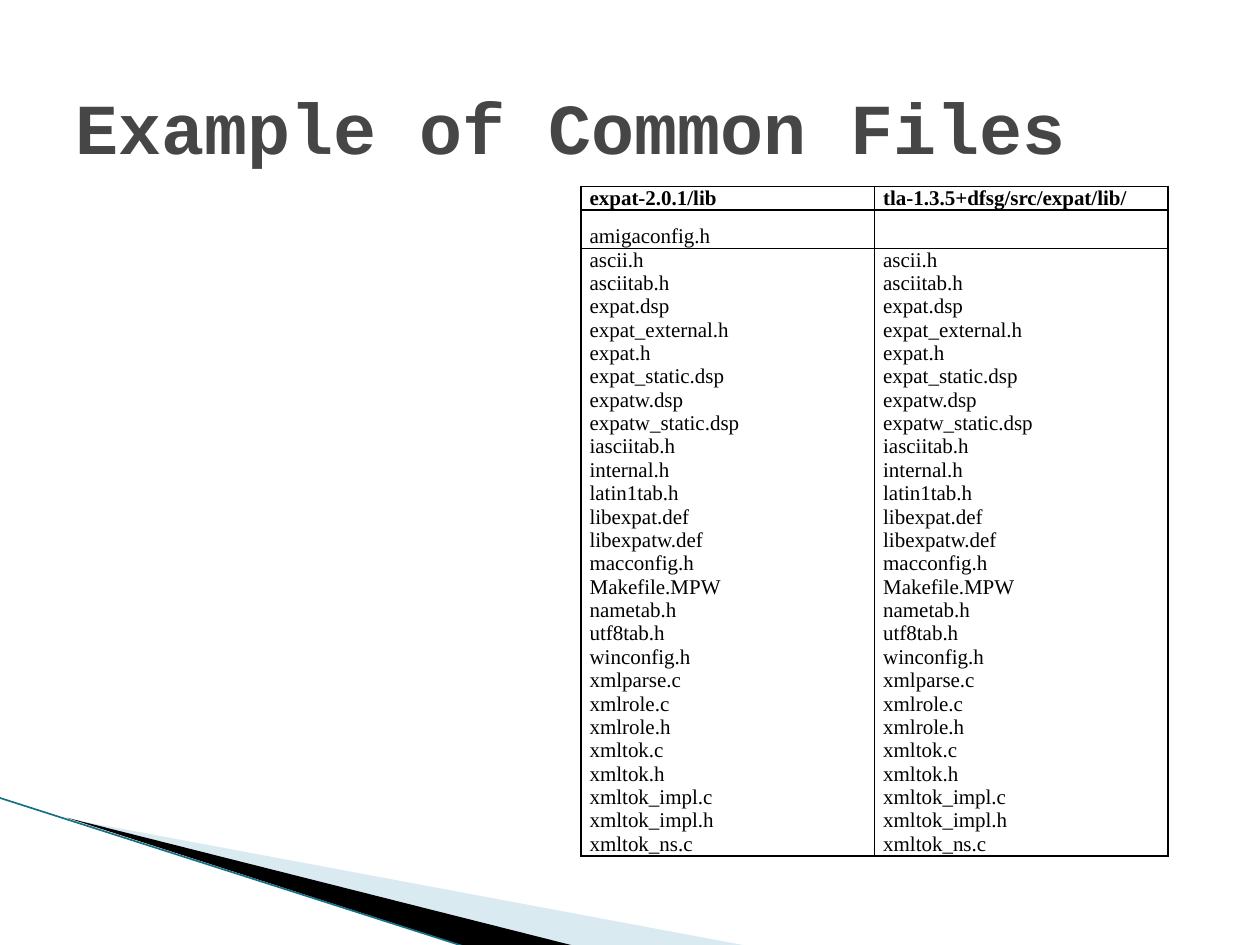
from lxml.etree import SubElement
from pptx import Presentation
from pptx.dml.color import RGBColor
from pptx.enum.shapes import MSO_CONNECTOR as Connector
from pptx.enum.text import MSO_ANCHOR as Anchor, PP_ALIGN as Align
from pptx.oxml.ns import qn
from pptx.util import Inches, Pt

WIDTH, HEIGHT = 10, 7.5
BLACK = "000000"
NO_STYLE = "{2D5ABB26-0587-4C30-8999-92F81FD0307C}"
FILES = """amigaconfig.h ascii.h asciitab.h expat.dsp expat_external.h expat.h
expat_static.dsp expatw.dsp expatw_static.dsp iasciitab.h internal.h latin1tab.h
libexpat.def libexpatw.def macconfig.h Makefile.MPW nametab.h utf8tab.h winconfig.h
xmlparse.c xmlrole.c xmlrole.h xmltok.c xmltok.h xmltok_impl.c xmltok_impl.h
xmltok_ns.c""".split()


def color(value):
    return RGBColor.from_string(value)


def add_border(cell, side):
    line = SubElement(cell._tc.get_or_add_tcPr(), qn(f"a:ln{side}"), w=str(Pt(1)))
    fill = SubElement(line, qn("a:solidFill"))
    SubElement(fill, qn("a:srgbClr"), val=BLACK)


deck = Presentation()
deck.slide_width, deck.slide_height = Inches(WIDTH), Inches(HEIGHT)
page = deck.slides.add_slide(deck.slide_layouts[6])

# Corner wedges, from back to front
wedges = [
    ("A0CBDC", 40, [(0.55, 6.5), (5.95, 7.51), (4.56, 7.51)]),
    (BLACK, 100, [(0.53, 6.49), (4.57, 7.51), (3.72, 7.52)]),
]
for fill, opacity, points in wedges:
    start, *rest = [(Inches(x), Inches(y)) for x, y in points]
    builder = page.shapes.build_freeform(*start, scale=1.0)
    builder.add_line_segments(rest, close=True)
    wedge = builder.convert_to_shape()
    wedge.shadow.inherit = False
    wedge.fill.solid()
    wedge.fill.fore_color.rgb = color(fill)
    wedge.line.fill.background()
    if opacity < 100:
        tint = wedge._element.spPr.find(qn("a:solidFill"))[0]
        SubElement(tint, qn("a:alpha"), val=str(opacity * 1000))

# Thin edge along the wedges
edge = page.shapes.add_connector(
    Connector.STRAIGHT, Inches(-0.01), Inches(6.33), Inches(3.71), Inches(7.52))
edge.line.color.rgb = color("17708A")
edge.line.width = Pt(0.95)
SubElement(edge._element.spPr, qn("a:effectLst"))

# File comparison table: only the second column lacks the first file
rows = [("expat-2.0.1/lib", "tla-1.3.5+dfsg/src/expat/lib/"), (FILES[0], "")]
rows += [(name, name) for name in FILES[1:]]
last = len(rows) - 1
row_heights = [0.17, 0.3] + [0.17] * (last - 1)
frame = page.shapes.add_table(
    len(rows), 2, Inches(4.61), Inches(1.48), Inches(4.66), Inches(sum(row_heights)))
table = frame.table
table.first_row = table.horz_banding = False
table._tbl.tblPr.find(qn("a:tableStyleId")).text = NO_STYLE

for r, names in enumerate(rows):
    table.rows[r].height = Inches(row_heights[r])
    sides = "LR" + ("T" if r < 2 else "") + ("B" if r in (0, last) else "")
    for c, name in enumerate(names):
        cell = table.cell(r, c)
        cell.margin_left = cell.margin_right = Inches(0.07)
        cell.margin_top = cell.margin_bottom = 0
        cell.vertical_anchor = Anchor.BOTTOM
        for side in sides:
            add_border(cell, side)
        cell.fill.background()
        cell.text_frame.text = name
        para = cell.text_frame.paragraphs[0]
        para.alignment = Align.JUSTIFY
        para.space_after = Pt(4)
        for span in para.runs:
            span.font.name = "Times New Roman"
            span.font.size = Pt(12)
            span.font.bold = r == 0
            span.font.color.rgb = color(BLACK)

# Title
title = page.shapes.add_textbox(Inches(0.5), Inches(0.3), Inches(9.46), Inches(1.4))
title.text_frame.word_wrap = True
title.text_frame.vertical_anchor = Anchor.MIDDLE
title.text_frame.text = "Example of Common Files"
font = title.text_frame.paragraphs[0].runs[0].font
font.name, font.size, font.bold = "Courier New", Pt(41), True
font.color.rgb = color("464646")

deck.save("out.pptx")
